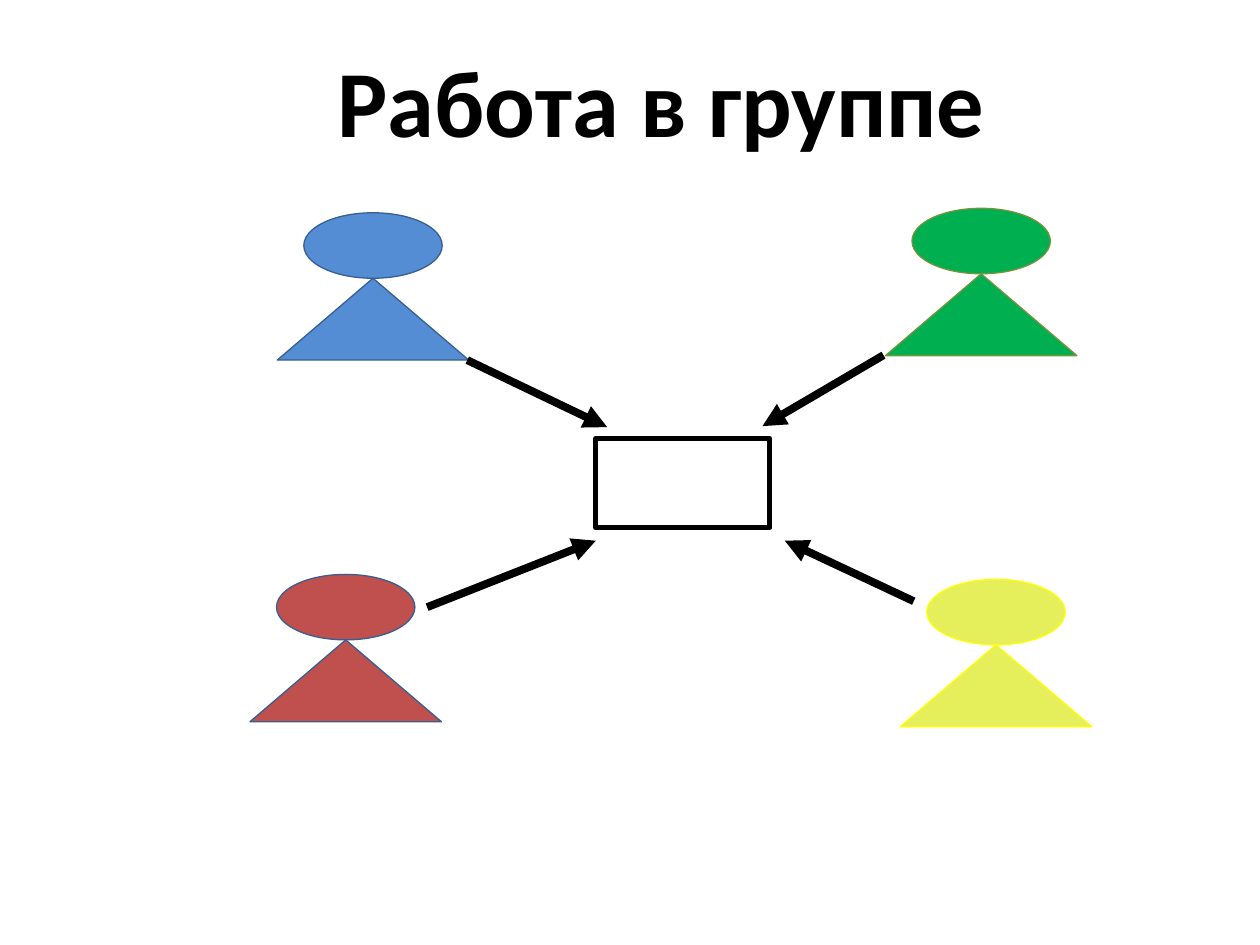
from lxml.etree import SubElement
from pptx import Presentation
from pptx.dml.color import RGBColor
from pptx.enum.shapes import MSO_CONNECTOR, MSO_SHAPE
from pptx.enum.text import MSO_ANCHOR, PP_ALIGN
from pptx.oxml.ns import qn
from pptx.util import Cm, Pt

COLORS = {
    "black": "000000", "white": "FFFFFF",
    "blue": "548DD4", "navy": "365F91",
    "green": "00B050", "olive": "76923C",
    "red": "C0504D",
    "lime": "E4EF5B", "yellow": "FFFF00",
}
HEAD_WIDTH, HEAD_HEIGHT = 2.79, 1.32
BODY_WIDTH, BODY_HEIGHT = 3.86, 1.65


def rgb(name):
    return RGBColor.from_string(COLORS[name])


def add_figure(kind, left, top, width, height, fill, line, weight=0.75):
    """Draw one filled and outlined preset shape; lengths in centimetres."""
    figure = slide.shapes.add_shape(kind, Cm(left), Cm(top), Cm(width), Cm(height))
    figure.shadow.inherit = False
    figure.fill.solid()
    figure.fill.fore_color.rgb = rgb(fill)
    figure.line.color.rgb = rgb(line)
    figure.line.width = Pt(weight)


presentation = Presentation()
presentation.slide_width, presentation.slide_height = Cm(25.4), Cm(19.05)
slide = presentation.slides.add_slide(presentation.slide_layouts[6])

# Heading
heading = slide.shapes.add_textbox(Cm(1.9), Cm(0.33), Cm(22.86), Cm(3.38)).text_frame
heading.word_wrap = True
heading.vertical_anchor = MSO_ANCHOR.MIDDLE
paragraph = heading.paragraphs[0]
paragraph.alignment = PP_ALIGN.CENTER
run = paragraph.add_run()
run.text = "Работа в группе"
for attribute, value in {"name": "Calibri", "size": Pt(54), "bold": True}.items():
    setattr(run.font, attribute, value)
run.font.color.rgb = rgb("black")

# Shared table
add_figure(MSO_SHAPE.RECTANGLE, 12.01, 8.84, 3.51, 1.8, "white", "black", 3)

# Group members: centre, top, fill, outline, arrow start, arrow end
members = [
    (20.08, 11.68, "lime", "yellow", (18.42, 12.12), (15.82, 10.9)),
    (7.52, 4.29, "blue", "navy", (9.42, 7.26), (12.24, 8.61)),
    (19.78, 4.2, "green", "olive", (17.81, 7.16), (15.37, 8.59)),
    (6.97, 11.58, "red", "navy", (8.61, 12.24), (12.01, 10.9)),
]
for centre, top, fill, outline, start, end in members:
    add_figure(MSO_SHAPE.OVAL, centre - HEAD_WIDTH / 2, top,
               HEAD_WIDTH, HEAD_HEIGHT, fill, outline)
    add_figure(MSO_SHAPE.ISOSCELES_TRIANGLE, centre - BODY_WIDTH / 2, top + HEAD_HEIGHT,
               BODY_WIDTH, BODY_HEIGHT, fill, outline)

    arrow = slide.shapes.add_connector(
        MSO_CONNECTOR.STRAIGHT, *[Cm(length) for length in start + end])
    arrow.line.color.rgb = rgb("black")
    arrow.line.width = Pt(4.5)
    SubElement(arrow.line._get_or_add_ln(), qn("a:tailEnd"), type="triangle")
    SubElement(arrow._element.spPr, qn("a:effectLst"))

presentation.save("out.pptx")
